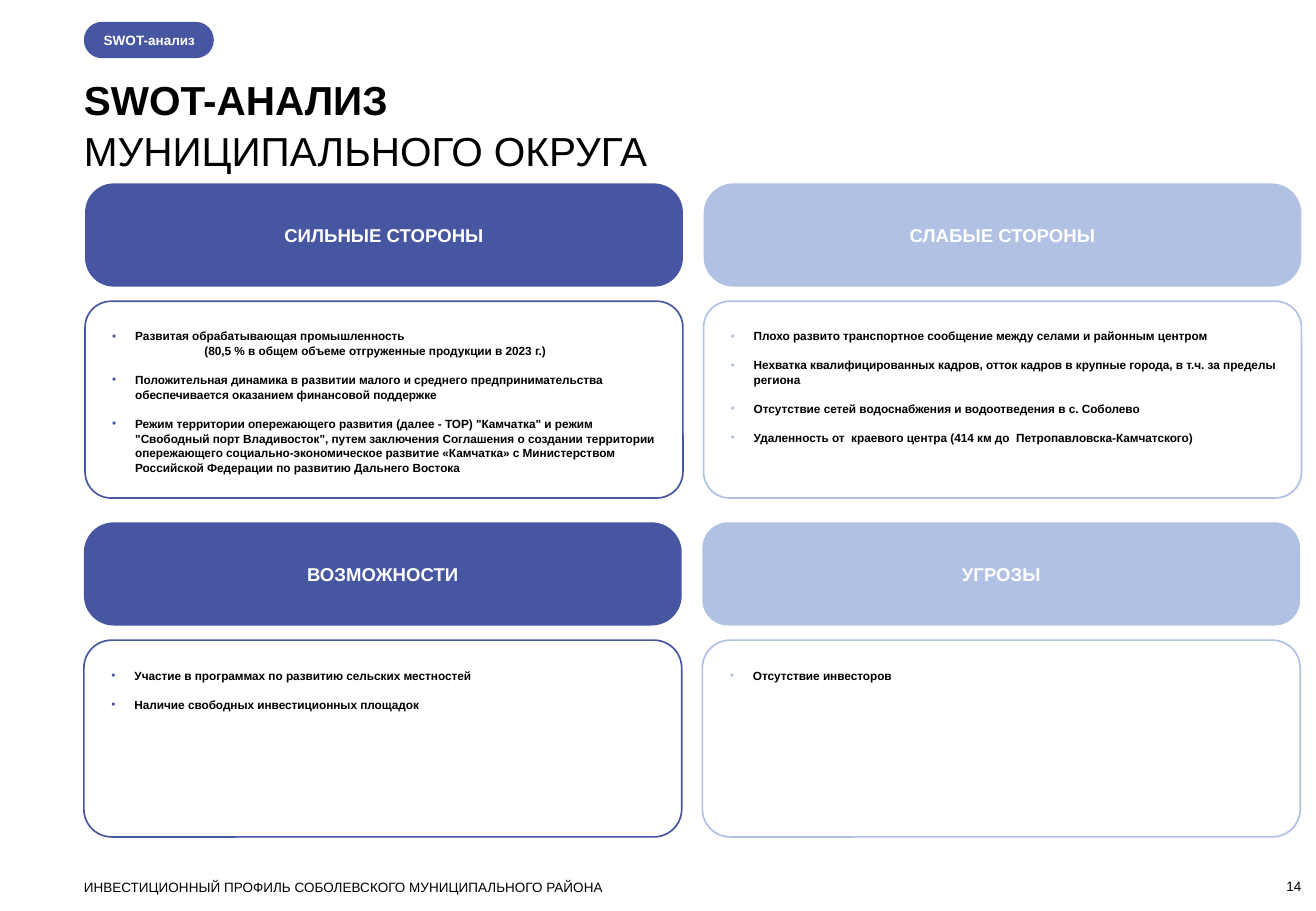
from dataclasses import dataclass

from lxml import etree
from pptx import Presentation
from pptx.dml.color import RGBColor
from pptx.enum.shapes import MSO_SHAPE
from pptx.enum.text import MSO_ANCHOR, PP_ALIGN
from pptx.oxml.ns import qn
from pptx.util import Inches, Pt

ROUND_RECT = MSO_SHAPE.ROUNDED_RECTANGLE
TOP, MIDDLE, BOTTOM = MSO_ANCHOR.TOP, MSO_ANCHOR.MIDDLE, MSO_ANCHOR.BOTTOM
LEFT, CENTER, RIGHT = PP_ALIGN.LEFT, PP_ALIGN.CENTER, PP_ALIGN.RIGHT


@dataclass(frozen=True)
class Theme:
    font: str = "Arial"
    dark: str = "4756A0"
    light: str = "B1C1E4"
    ink: str = "000000"
    white: str = "FFFFFF"
    title: float = 24
    heading: float = 11
    small: float = 8
    body: float = 7
    leading: float = 1.05
    bullet_gap: float = 8.4


@dataclass(frozen=True)
class Grid:
    """Two columns by two rows of panels, in inches."""
    left: float = 0.7
    top: float = 1.51
    col_pitch: float = 5.09
    row_pitch: float = 2.79
    row_shift: float = -0.01
    width: float = 4.92
    header: float = 0.85
    body_offset: float = 0.97
    body: float = 1.62

    def x(self, col: int, row: int) -> float:
        return self.left + col * self.col_pitch + row * self.row_shift

    def y(self, row: int) -> float:
        return self.top + row * self.row_pitch


@dataclass(frozen=True)
class Item:
    text: str
    detail: str = ""


@dataclass(frozen=True)
class Panel:
    col: int
    row: int
    title: str
    header_round: float
    items: tuple[Item, ...]


T, G = Theme(), Grid()
COLUMN_COLORS = (T.dark, T.light)
COLUMN_INSETS = (0.16, 0.1)
BODY_ROUND = (0.132, 0.141)
BULLET_INDENT, DETAIL_INDENT = 0.19, 0.76

PANELS = (
    Panel(0, 0, "СИЛЬНЫЕ СТОРОНЫ", 0.28, (
        Item("Развитая обрабатывающая промышленность",
             "(80,5 % в общем объеме отгруженные продукции в 2023 г.)"),
        Item("Положительная динамика в развитии малого и среднего предпринимательства "
             "обеспечивается оказанием финансовой поддержке"),
        Item('Режим территории опережающего развития (далее - ТОР) "Камчатка" и режим '
             '"Свободный порт Владивосток", путем заключения Соглашения о создании '
             "территории опережающего социально-экономическое развитие «Камчатка» с "
             "Министерством Российской Федерации по развитию Дальнего Востока"))),
    Panel(1, 0, "СЛАБЫЕ СТОРОНЫ", 0.29, (
        Item("Плохо развито транспортное сообщение между селами и районным центром"),
        Item("Нехватка квалифицированных кадров, отток кадров в крупные города, "
             "в т.ч. за пределы региона"),
        Item("Отсутствие сетей водоснабжения и водоотведения в с. Соболево"),
        Item("Удаленность от  краевого центра (414 км до  Петропавловска-Камчатского)"))),
    Panel(0, 1, "ВОЗМОЖНОСТИ", 0.29, (
        Item("Участие в программах по развитию сельских местностей"),
        Item("Наличие свободных инвестиционных площадок"))),
    Panel(1, 1, "УГРОЗЫ", 0.25, (Item("Отсутствие инвесторов"),)),
)


def set_frame(tf, insets: tuple[float, ...], anchor=TOP) -> None:
    tf.word_wrap = True
    tf.vertical_anchor = anchor
    tf.margin_left, tf.margin_top, tf.margin_right, tf.margin_bottom = map(Inches, insets)


def write(tf, text: str, size: float, color: str, bold: bool = False, align=LEFT):
    """Fill the first paragraph if it is empty, otherwise add one."""
    p = tf.paragraphs[0] if not tf.text else tf.add_paragraph()
    p.text, p.alignment, p.line_spacing = text, align, T.leading
    p.font.name, p.font.size, p.font.bold = T.font, Pt(size), bold
    p.font.color.rgb = RGBColor.from_string(color)
    return p


def set_indent(p, left: float, bullet_color: str = "") -> None:
    pPr = p._p.get_or_add_pPr()
    pPr.set("marL", str(Inches(left)))
    if not bullet_color:
        return
    pPr.set("indent", str(-Inches(left)))
    color = etree.Element(qn("a:buClr"))
    etree.SubElement(color, qn("a:srgbClr"), val=bullet_color)
    font = etree.Element(qn("a:buFont"), typeface=T.font)
    char = etree.Element(qn("a:buChar"), char="•")
    at = pPr.index(pPr.find(qn("a:defRPr")))
    pPr[at:at] = [color, font, char]


def add_box(s, x: float, y: float, w: float, h: float, rounding: float,
            fill: str = "", line: str = ""):
    sp = s.shapes.add_shape(ROUND_RECT, *map(Inches, (x, y, w, h)))
    sp.shadow.inherit = False
    sp.adjustments[0] = rounding
    if fill:
        sp.fill.solid()
        sp.fill.fore_color.rgb = RGBColor.from_string(fill)
    else:
        sp.fill.background()
    if line:
        sp.line.color.rgb = RGBColor.from_string(line)
        sp.line.width = Pt(1)
    else:
        sp.line.fill.background()
    return sp


def add_text(s, x: float, y: float, w: float, h: float, anchor=TOP):
    tf = s.shapes.add_textbox(*map(Inches, (x, y, w, h))).text_frame
    set_frame(tf, (0, 0, 0, 0), anchor)
    return tf


def add_panel(s, panel: Panel) -> None:
    x, y = G.x(panel.col, panel.row), G.y(panel.row)
    color = COLUMN_COLORS[panel.col]

    # Heading bar
    tf = add_box(s, x, y, G.width, G.header, panel.header_round, fill=color).text_frame
    set_frame(tf, (0.1, 0.05, 0.1, 0.05), MIDDLE)
    write(tf, panel.title, T.heading, T.white, True, CENTER)

    # Outlined list
    tf = add_box(s, x, y + G.body_offset, G.width, G.body,
                 BODY_ROUND[panel.row], line=color).text_frame
    set_frame(tf, (0.16, 0.16, COLUMN_INSETS[panel.col], 0.05))
    for i, item in enumerate(panel.items):
        p = write(tf, item.text, T.body, T.ink, True)
        p.space_before = Pt(T.bullet_gap if i else 0)
        set_indent(p, BULLET_INDENT, color)
        if item.detail:
            set_indent(write(tf, item.detail, T.body, T.ink, True), DETAIL_INDENT)


def main() -> None:
    prs = Presentation()
    prs.slide_width, prs.slide_height = Inches(10.83), Inches(7.5)
    s = prs.slides.add_slide(prs.slide_layouts[6])
    margin = G.x(0, 1)

    # Section tag
    tf = add_box(s, margin, 0.18, 1.07, 0.3, 0.5, fill=T.dark).text_frame
    set_frame(tf, (0.12, 0, 0, 0), MIDDLE)
    write(tf, "SWOT-анализ", T.small, T.white, True)

    # Title
    tf = add_text(s, margin, 0.6, G.width, 0.81)
    write(tf, "SWOT-АНАЛИЗ", T.title, T.ink, True)
    write(tf, "МУНИЦИПАЛЬНОГО ОКРУГА", T.title, T.ink)

    # SWOT panels
    for panel in PANELS:
        add_panel(s, panel)

    # Footer and page number
    tf = add_text(s, margin, 7.23, 8, 0.13)
    write(tf, "ИНВЕСТИЦИОННЫЙ ПРОФИЛЬ СОБОЛЕВСКОГО МУНИЦИПАЛЬНОГО РАЙОНА", T.small, T.ink)
    tf = add_text(s, 9.91, 7.23, 0.8, 0.13, BOTTOM)
    write(tf, "14", T.small, T.ink, align=RIGHT)

    prs.save("out.pptx")


if __name__ == "__main__":
    main()
